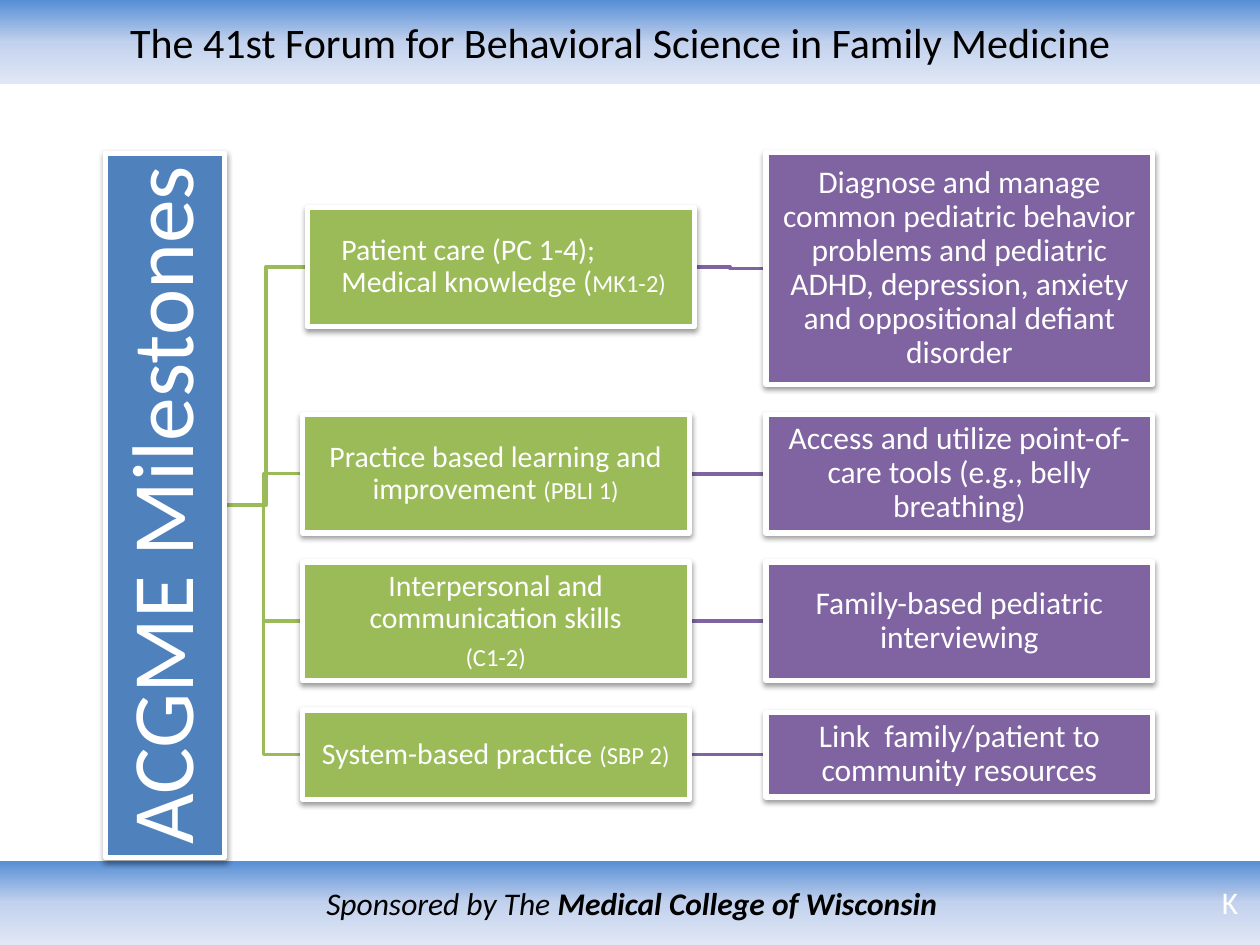
from lxml.etree import SubElement
from pptx import Presentation
from pptx.dml.color import RGBColor as RGB
from pptx.enum.shapes import MSO_CONNECTOR as CONN, MSO_SHAPE as SHAPE
from pptx.enum.text import MSO_ANCHOR as ANCHOR, PP_ALIGN as ALIGN
from pptx.oxml import parse_xml
from pptx.oxml.ns import nsdecls, qn
from pptx.util import Inches, Pt

TITLE = [[("The 41st Forum for Behavioral Science in Family Medicine", "title", {})]]
SPONSOR = [[("Sponsored by The ", "body", {"italic": True}),
            ("Medical College of Wisconsin", "body", {"italic": True, "bold": True})]]
CORNER = [[("K", "body", {})]]
ROOT = [[("ACGME Milestones", "root", {})]]
ROWS = [
    {"mid": 2.12, "height": 0.94, "shift": 0.04, "align": ALIGN.LEFT, "indent": 0.26,
     "skill": [[("Patient care (PC 1-4);\vMedical knowledge (", "skill", {}), ("MK1-2)", "code", {})]],
     "goal": "Diagnose and manage common pediatric behavior problems and pediatric ADHD, "
             "depression, anxiety and oppositional defiant disorder",
     "goal_mid": 2.13, "goal_height": 1.84},
    {"mid": 3.76, "height": 0.94,
     "skill": [[("Practice based learning and improvement ", "skill", {}), ("(PBLI 1)", "code", {})]],
     "goal": "Access and utilize point-of-care tools (e.g., belly breathing)"},
    {"mid": 4.93, "height": 0.94,
     "skill": [[("Interpersonal and communication skills", "skill", {})], [("(C1-2)", "code", {})]],
     "goal": "Family-based pediatric interviewing"},
    {"mid": 5.99, "height": 0.71,
     "skill": [[("System-based practice ", "skill", {}), ("(SBP 2)", "code", {})]],
     "goal": "Link  family/patient to community resources", "goal_height": 0.67},
]

THEME = {
    "font": "Calibri",
    "sizes": {"title": 24, "body": 18, "root": 50, "skill": 17, "code": 14},
    "root": "4F81BD", "skill": "9BBB59", "goal": "8064A2",
    "light": "FFFFFF", "dark": "000000",
    "band": [(0, "558ED5"), (50, "C2D1ED"), (100, "E1E8F5")],
    "border": 3, "link": 2,
}
SLIDE_W, SLIDE_H = 10, 7.5
BAND_H = 0.67
BOX_W = 3.07
ROOT_MID = (1.31, 4.01)
ROOT_SIZE = (5.59, 0.94)
ROOT_RIGHT = ROOT_MID[0] + ROOT_SIZE[1] / 2
SKILL_X, GOAL_X = 2.4, 6.08


def write(shape, paragraphs, color, align=ALIGN.CENTER, insets=(0.1, 0.05, 0.1, 0.05),
          spacing=1.0, anchor=ANCHOR.MIDDLE):
    """Fill a shape with paragraphs of (text, size name, font format) runs."""
    tf = shape.text_frame
    left, top, right, bottom = map(Inches, insets)
    frame = {"word_wrap": True, "vertical_anchor": anchor, "margin_left": left,
             "margin_top": top, "margin_right": right, "margin_bottom": bottom}
    for name, value in frame.items():
        setattr(tf, name, value)
    for i, runs in enumerate(paragraphs):
        p = tf.paragraphs[0] if i == 0 else tf.add_paragraph()
        p.alignment, p.line_spacing = align, spacing
        if i < len(paragraphs) - 1:
            p.space_after = Pt(6)
        for text, size, extra in runs:
            for j, part in enumerate(text.split("\v")):
                if j:
                    p.add_line_break()
                r = p.add_run()
                r.text = part
                font = {"name": THEME["font"], "size": Pt(THEME["sizes"][size]), **extra}
                for name, value in font.items():
                    setattr(r.font, name, value)
                r.font.color.rgb = RGB.from_string(THEME[color])


def add_band(s, top, width, paragraphs, right_inset=0.1):
    """Add a full-width gradient band with centred text."""
    sp = s.shapes.add_shape(SHAPE.RECTANGLE, 0, Inches(top), Inches(width), Inches(BAND_H))
    stops = "".join(f'<a:gs pos="{pos * 1000}"><a:srgbClr val="{color}"/></a:gs>'
                    for pos, color in THEME["band"])
    sp.element.spPr.insert(2, parse_xml(
        f'<a:gradFill {nsdecls("a")} rotWithShape="1"><a:gsLst>{stops}</a:gsLst>'
        '<a:lin ang="5400000" scaled="0"/></a:gradFill>'))
    sp.line.fill.background()
    sp.shadow.inherit = False
    write(sp, paragraphs, "dark", insets=(0.1, 0.05, right_inset, 0.05))


def add_box(s, center, size, fill, paragraphs, rotation=0, inset=0.01, indent=0, align=ALIGN.CENTER):
    """Add a bordered, softly shadowed box around its centre."""
    (cx, cy), (w, h) = center, size
    sp = s.shapes.add_shape(SHAPE.RECTANGLE, *map(Inches, (cx - w / 2, cy - h / 2, w, h)))
    sp.rotation = rotation
    sp.fill.solid()
    sp.fill.fore_color.rgb = RGB.from_string(THEME[fill])
    sp.line.color.rgb = RGB.from_string(THEME["light"])
    sp.line.width = Pt(THEME["border"])
    sp.shadow.inherit = False
    effects = sp.element.spPr.find(qn("a:effectLst"))
    shadow = SubElement(effects, qn("a:outerShdw"), blurRad=str(Pt(3.1)), dist=str(Pt(1.6)),
                        dir="5400000", rotWithShape="0")
    color = SubElement(shadow, qn("a:srgbClr"), val=THEME["dark"])
    SubElement(color, qn("a:alpha"), val="38000")
    write(sp, paragraphs, "light", align, (inset + indent, inset, inset, inset), 0.9)


def add_link(s, start, end, color):
    """Join two points with a straight or elbow connector."""
    kind = CONN.STRAIGHT if start[1] == end[1] else CONN.ELBOW
    link = s.shapes.add_connector(kind, *map(Inches, (*start, *end)))
    link.line.color.rgb = RGB.from_string(THEME[color])
    link.line.width = Pt(THEME["link"])
    SubElement(link.element.spPr, qn("a:effectLst"))


def main():
    """Build the slide and save it."""
    prs = Presentation()
    prs.slide_width, prs.slide_height = Inches(SLIDE_W), Inches(SLIDE_H)
    s = prs.slides.add_slide(prs.slide_layouts[6])
    add_band(s, 0, SLIDE_W, TITLE, right_inset=0.25)
    add_band(s, SLIDE_H - BAND_H, SLIDE_W + 0.03, SPONSOR)

    for row in reversed(ROWS):
        x, mid = SKILL_X + row.get("shift", 0), row["mid"]
        add_link(s, (x + BOX_W, mid), (GOAL_X, row.get("goal_mid", mid)), "goal")
        add_link(s, (ROOT_RIGHT, ROOT_MID[1]), (x, mid), "skill")

    add_box(s, ROOT_MID, ROOT_SIZE, "root", ROOT, rotation=270, inset=0.03)
    for row in ROWS:
        x, mid, height = SKILL_X + row.get("shift", 0), row["mid"], row["height"]
        add_box(s, (x + BOX_W / 2, mid), (BOX_W, height), "skill", row["skill"],
                indent=row.get("indent", 0), align=row.get("align", ALIGN.CENTER))
        add_box(s, (GOAL_X + BOX_W / 2, row.get("goal_mid", mid)),
                (BOX_W, row.get("goal_height", height)), "goal", [[(row["goal"], "body", {})]])

    corner = s.shapes.add_textbox(*map(Inches, (9.6, 6.96, 0.4, 0.4)))
    write(corner, CORNER, "light", ALIGN.LEFT, anchor=ANCHOR.TOP)
    prs.save("out.pptx")


if __name__ == "__main__":
    main()
